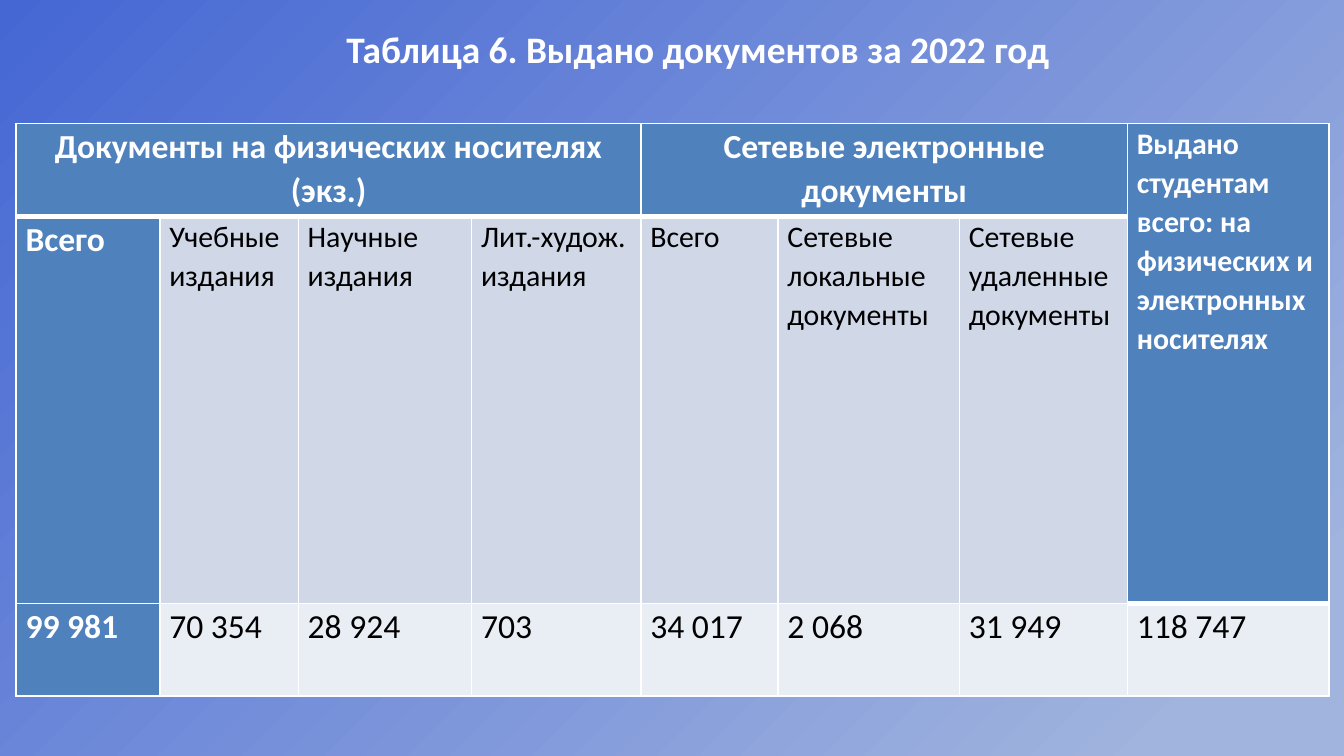
from lxml import etree
from pptx import Presentation
from pptx.dml.color import RGBColor
from pptx.enum.text import MSO_ANCHOR, PP_ALIGN
from pptx.oxml.ns import qn
from pptx.util import Inches, Pt

CENTER, LEFT, JUSTIFY = PP_ALIGN.CENTER, PP_ALIGN.LEFT, PP_ALIGN.JUSTIFY
MIDDLE = MSO_ANCHOR.MIDDLE
WHITE = RGBColor(0xFF, 0xFF, 0xFF)
BLACK = RGBColor(0, 0, 0)
HEADER_BLUE = RGBColor(0x4F, 0x81, 0xBD)
BAND_DARK = RGBColor(0xD0, 0xD8, 0xE8)
BAND_LIGHT = RGBColor(0xE9, 0xED, 0xF4)
BACK_START = RGBColor(0x45, 0x67, 0xD4)
BACK_END = RGBColor(0xA1, 0xB4, 0xDE)

COLUMN_WIDTHS = [1.07, 1.03, 1.29, 1.26, 1.02, 1.35, 1.25, 1.5]
ROW_HEIGHTS = [0.69, 2.88, 0.69]
ROWS = [
    ["Документы на физических носителях (экз.)", "", "", "",
     "Сетевые электронные документы", "", "",
     "Выдано студентам всего: на физических и электронных носителях"],
    ["Всего", "Учебные издания", "Научные издания", "Лит.-худож. издания",
     "Всего", "Сетевые локальные документы", "Сетевые удаленные документы", ""],
    ["99 981", "70 354", "28 924", "703", "34 017", "2 068", "31 949", "118 747"],
]
LAST = len(COLUMN_WIDTHS) - 1


def style_text(para, size, color, bold, align):
    para.alignment = align
    for span in para.runs:
        span.font.name = "Calibri"
        span.font.size = Pt(size)
        span.font.bold = bold
        span.font.color.rgb = color


def set_borders(cell, top, bottom):
    """Draw white borders; top and bottom are widths in points."""
    properties = cell._tc.get_or_add_tcPr()
    sides = [("a:lnL", 1), ("a:lnR", 1), ("a:lnT", top), ("a:lnB", bottom)]
    for tag, width in sides:
        line = etree.SubElement(properties, qn(tag), w=str(Pt(width)))
        fill = etree.SubElement(line, qn("a:solidFill"))
        etree.SubElement(fill, qn("a:srgbClr"), val=str(WHITE))


deck = Presentation()
deck.slide_width = Inches(10)
deck.slide_height = deck.slide_width * 9 // 16
page = deck.slides.add_slide(deck.slide_layouts[6])

backdrop = page.background.fill
backdrop.gradient()
backdrop.gradient_angle = 315
stops = [(0, BACK_START), (0.91, BACK_END)]
for stop, (position, color) in zip(backdrop.gradient_stops, stops):
    stop.position = position
    stop.color.rgb = color

table = page.shapes.add_table(
    len(ROWS), len(COLUMN_WIDTHS),
    Inches(0.12), Inches(0.92), Inches(9.76), Inches(4.25)).table
for column, width in zip(table.columns, COLUMN_WIDTHS):
    column.width = Inches(width)
for row, height in zip(table.rows, ROW_HEIGHTS):
    row.height = Inches(height)

for r, texts in enumerate(ROWS):
    for c, text in enumerate(texts):
        cell = table.cell(r, c)
        header_end = 1 if c == LAST else 0
        is_header = r <= header_end or c == 0
        set_borders(cell, 3 if r == header_end + 1 else 1,
                    3 if r == header_end else 1)
        cell.fill.solid()
        cell.fill.fore_color.rgb = (
            HEADER_BLUE if is_header else BAND_DARK if r == 1 else BAND_LIGHT)
        cell.margin_left = cell.margin_right = Inches(0.07)
        cell.margin_top = cell.margin_bottom = 0
        cell.text_frame.text = text
        para = cell.text_frame.paragraphs[0]
        para.line_spacing = 1.07
        small = (r == 1 and c > 0) or (r == 0 and c == LAST)
        style_text(para, 16 if small else 18, WHITE if is_header else BLACK,
                   is_header, CENTER if r == 0 and c < LAST else LEFT)

for first, last in [((0, 0), (0, 3)), ((0, 4), (0, 6)), ((0, LAST), (1, LAST))]:
    table.cell(*first).merge(table.cell(*last))

title = page.shapes.add_textbox(
    Inches(2.48), Inches(0.14), Inches(5.46), Inches(0.44)).text_frame
title.word_wrap = False
title.vertical_anchor = MIDDLE
title.text = "Таблица 6. Выдано документов за 2022 год"
style_text(title.paragraphs[0], 20, WHITE, True, JUSTIFY)

deck.save("out.pptx")
